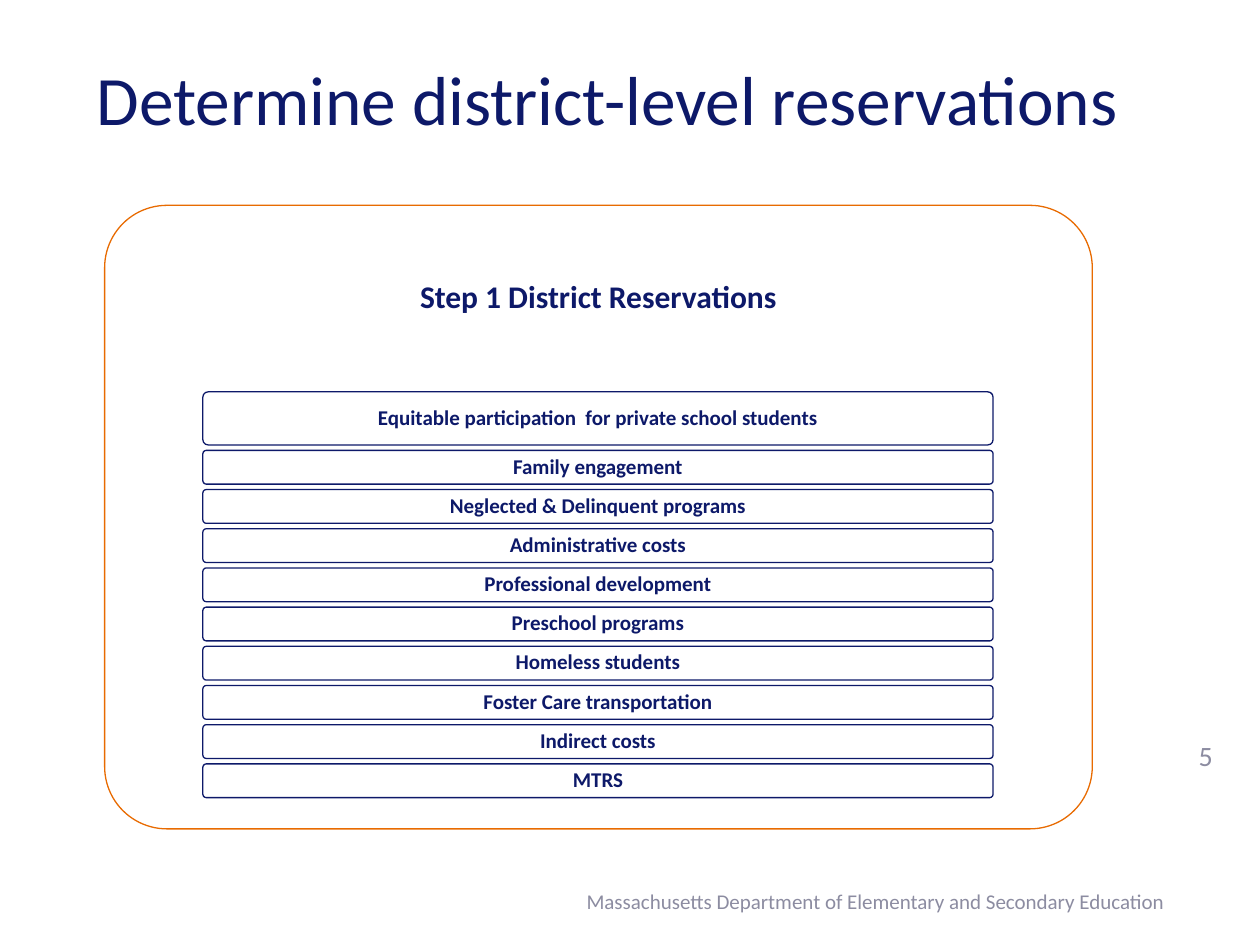
from pptx import Presentation
from pptx import util as u
from pptx.dml.color import RGBColor
from pptx.enum import shapes, text

THEME = {
    "font": "Calibri", "navy": "0D1969", "orange": "E86B01", "gray": "8C8CA1",
    "title": 39.6, "head": 18, "body": 12, "page": 16, "line": 0.75,
}
TITLE = "Determine district-level reservations"
HEAD = "Step 1 District Reservations"
ITEMS = [
    "Equitable participation  for private school students",
    "Family engagement",
    "Neglected & Delinquent programs",
    "Administrative costs",
    "Professional development",
    "Preschool programs",
    "Homeless students",
    "Foster Care transportation",
    "Indirect costs",
    "MTRS",
]
FOOTER = "Massachusetts Department of Elementary and Secondary Education"
PAGE = "5"

# Lengths in cm: left, top, width, height
FRAME = (2.11, 4.14, 19.91, 12.57)
HEAD_PAD = (0.18, 0.18, 0.18, 8.99)
ROW_PAD = (0.1, 0.08, 0.1, 0.08)
ROW_X, ROW_Y, ROW_W = 4.09, 7.9, 15.93
TALL, LOW, GAP = 1.07, 0.68, 0.11

ALIGN = text.PP_ALIGN


def rgb(name):
    return RGBColor.from_string(THEME[name])


def write(shape, words, size, color="navy", align=ALIGN.CENTER, bold=False):
    frame = shape.text_frame
    frame.word_wrap = True
    frame.vertical_anchor = text.MSO_ANCHOR.MIDDLE
    para = frame.paragraphs[0]
    para.text = words
    para.alignment = align
    look = {"name": THEME["font"], "size": u.Pt(THEME[size]), "bold": bold}
    for key, val in look.items():
        setattr(para.font, key, val)
    para.font.color.rgb = rgb(color)
    return para


def label(slide, box, *args, **look):
    write(slide.shapes.add_textbox(*map(u.Cm, box)), *args, **look)


def panel(slide, box, words, size, edge, pad):
    """Add an unfilled rounded box with bold text; pad is left, top, right, bottom."""
    shape = slide.shapes.add_shape(
        shapes.MSO_SHAPE.ROUNDED_RECTANGLE, *map(u.Cm, box))
    shape.shadow.inherit = False
    shape.adjustments[0] = 0.1
    shape.fill.background()
    shape.line.color.rgb = rgb(edge)
    shape.line.width = u.Pt(THEME["line"])
    for side, val in zip(("left", "top", "right", "bottom"), pad):
        setattr(shape.text_frame, f"margin_{side}", u.Cm(val))
    write(shape, words, size, bold=True).line_spacing = 0.9


def main():
    deck = Presentation()
    deck.slide_width, deck.slide_height = u.Cm(25.4), u.Cm(19.05)
    slide = deck.slides.add_slide(deck.slide_layouts[6])

    label(slide, (1.7, 0.76, 22.02, 2.41), TITLE, "title", align=ALIGN.LEFT)
    panel(slide, FRAME, HEAD, "head", "orange", HEAD_PAD)

    top = ROW_Y
    for i, item in enumerate(ITEMS):
        high = LOW if i else TALL
        panel(slide, (ROW_X, top, ROW_W, high), item, "body", "navy", ROW_PAD)
        top += high + GAP

    label(slide, (8.69, 17.65, 15.04, 1.02), FOOTER, "body", "gray", ALIGN.RIGHT)
    label(slide, (23.57, 14.6, 1.47, 1.27), PAGE, "page", "gray")
    deck.save("out.pptx")


if __name__ == "__main__":
    main()
